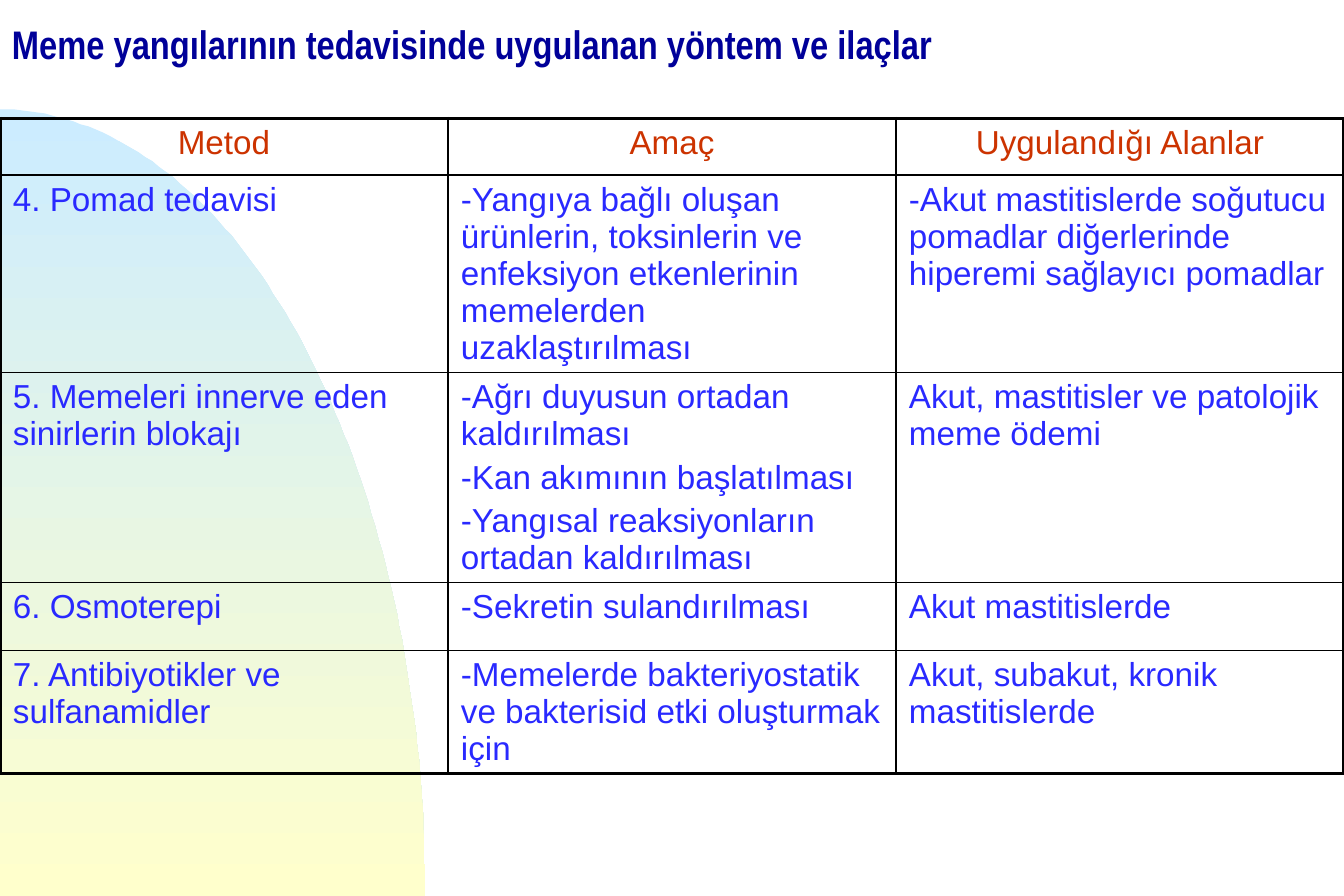
from math import cos, pi, sin

from lxml import etree
from pptx import Presentation
from pptx.dml.color import RGBColor
from pptx.enum.text import MSO_ANCHOR, MSO_AUTO_SIZE, PP_ALIGN
from pptx.oxml.ns import qn
from pptx.util import Pt

PX = 7620  # 120 px to the inch
WIDTH, HEIGHT = 1350, 900
LEFT, CENTER = PP_ALIGN.LEFT, PP_ALIGN.CENTER
TOP, NO_FIT = MSO_ANCHOR.TOP, MSO_AUTO_SIZE.NONE
THIN, THICK = 1, 2.25

HEADERS = ["Metod", "Amaç", "Uygulandığı Alanlar"]
TREATMENTS = [
    ["4. Pomad tedavisi",
     "-Yangıya bağlı oluşan ürünlerin, toksinlerin ve enfeksiyon "
     "etkenlerinin memelerden uzaklaştırılması",
     "-Akut mastitislerde soğutucu pomadlar diğerlerinde hiperemi "
     "sağlayıcı pomadlar"],
    ["5. Memeleri innerve eden sinirlerin blokajı",
     "-Ağrı duyusun ortadan kaldırılması\n"
     "-Kan akımının başlatılması\n"
     "-Yangısal reaksiyonların ortadan kaldırılması",
     "Akut, mastitisler ve patolojik meme ödemi"],
    ["6. Osmoterepi", "-Sekretin sulandırılması", "Akut mastitislerde"],
    ["7. Antibiyotikler ve sulfanamidler",
     "-Memelerde bakteriyostatik ve bakterisid etki oluşturmak için",
     "Akut, subakut, kronik mastitislerde"],
]
ROW_HEIGHTS = [57, 198, 211, 68, 123]


def px(n):
    return n * PX


def rgb(value):
    return RGBColor.from_string(value)


def write(tf, text, size=20, font="Arial", color="2929FF", bold=False,
          align=LEFT, gap=4):
    for i, line in enumerate(text.split("\n")):
        p = tf.add_paragraph() if i else tf.paragraphs[0]
        p.alignment = align
        p.space_before = Pt(gap if i else 0)
        r = p.add_run()
        r.text = line
        r.font.size, r.font.name, r.font.bold = Pt(size), font, bold
        r.font.color.rgb = rgb(color)


def add_quarter_ellipse(s, rx, ry, steps=90):
    """Gradient quarter ellipse centred on the bottom left corner."""
    angles = [pi / 2 * i / steps for i in range(steps + 1)]
    points = [(round(rx * sin(a), 2), round(HEIGHT - ry * cos(a), 2))
              for a in angles]
    builder = s.shapes.build_freeform(*points[0], scale=PX)
    builder.add_line_segments(points[1:] + [(0, HEIGHT)], close=True)
    sp = builder.convert_to_shape()
    sp.shadow.inherit = False
    sp.line.fill.background()
    sp.fill.gradient()
    sp.fill.gradient_angle = 270
    for stop, (position, color) in zip(sp.fill.gradient_stops,
                                       [(0, "CCECFF"), (1, "FFFFCC")]):
        stop.position = position
        stop.color.rgb = rgb(color)


def set_title(s, text):
    sp = s.shapes.title
    sp.left, sp.top, sp.width, sp.height = 0, 0, px(WIDTH), px(54)
    tf = sp.text_frame
    tf.auto_size, tf.word_wrap, tf.vertical_anchor = NO_FIT, True, TOP
    tf.margin_left = tf.margin_right = px(12)
    tf.margin_top, tf.margin_bottom = px(20), 0
    write(tf, text, size=24, font="Arial Narrow", color="000099", bold=True)


def set_borders(cell, widths):
    tcPr = cell._tc.get_or_add_tcPr()
    for i, (side, width) in enumerate(widths.items()):
        ln = etree.Element(qn("a:ln" + side), w=str(int(Pt(width))))
        fill = etree.SubElement(ln, qn("a:solidFill"))
        etree.SubElement(fill, qn("a:srgbClr"), val="000000")
        tcPr.insert(i, ln)


def add_treatment_table(s, top):
    rows = [HEADERS] + TREATMENTS
    last_row, last_col = len(rows) - 1, len(HEADERS) - 1
    table = s.shapes.add_table(len(rows), len(HEADERS), 0, px(top),
                               px(WIDTH), px(sum(ROW_HEIGHTS))).table
    table.first_row = table.horz_banding = False
    for row, height in zip(table.rows, ROW_HEIGHTS):
        row.height = px(height)
    for i, texts in enumerate(rows):
        for j, text in enumerate(texts):
            cell = table.cell(i, j)
            cell.margin_left = cell.margin_right = px(13)
            cell.margin_top = cell.margin_bottom = px(6)
            cell.fill.background()
            set_borders(cell, {"L": THIN if j else THICK,
                               "R": THICK if j == last_col else THIN,
                               "T": THIN if i else THICK,
                               "B": THICK if i == last_row else THIN})
            style = {} if i else {"color": "CC3300", "align": CENTER}
            write(cell.text_frame, text, **style)


def main():
    prs = Presentation()
    prs.slide_width, prs.slide_height = px(WIDTH), px(HEIGHT)
    s = prs.slides.add_slide(prs.slide_layouts[5])

    # Background decoration
    add_quarter_ellipse(s, 427, 790)

    # Title and table
    set_title(s, "Meme yangılarının tedavisinde uygulanan yöntem ve ilaçlar")
    add_treatment_table(s, 119)

    prs.save("out.pptx")


if __name__ == "__main__":
    main()
